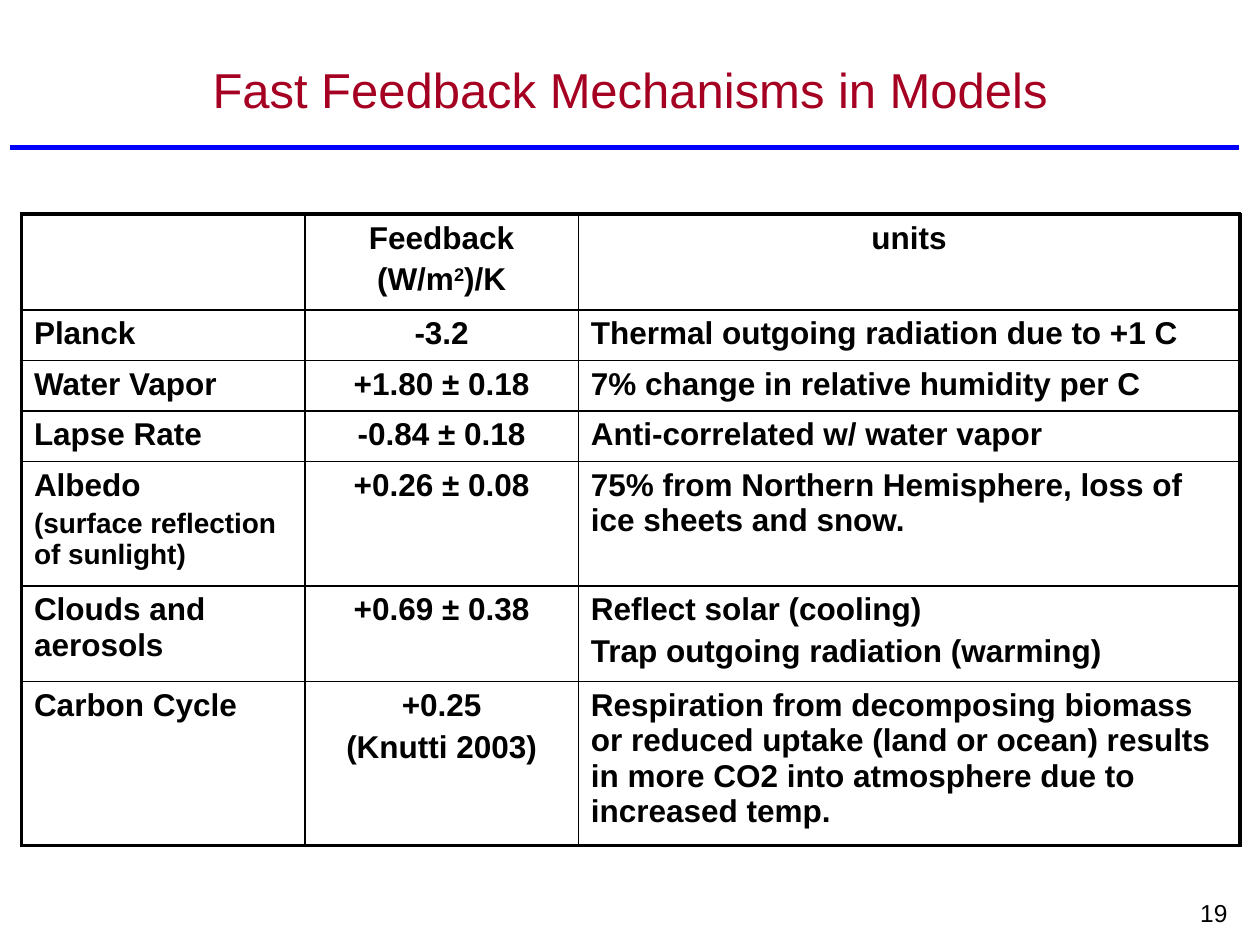
from dataclasses import dataclass

from lxml import etree
from pptx import Presentation
from pptx.dml.color import RGBColor
from pptx.enum import shapes, text
from pptx.oxml import ns
from pptx.util import Inches, Pt


@dataclass(frozen=True)
class Theme:
    font: str = "Arial"
    ink: str = "000000"
    title_ink: str = "A50021"
    rule_ink: str = "0000FF"
    title_size: int = 28
    body_size: int = 18
    note_size: int = 16
    number_size: int = 14
    rule_width: float = 3
    frame_width: float = 2.25
    grid_width: float = 1


@dataclass(frozen=True)
class Line:
    """One paragraph; raised is the part of its words set as superscript."""
    words: str
    size: int = 18
    raised: str = ""


@dataclass(frozen=True)
class Feedback:
    mechanism: tuple
    strength: tuple
    remark: tuple
    height: float


THEME = Theme()
CENTER, LEFT, RIGHT = text.PP_ALIGN.CENTER, text.PP_ALIGN.LEFT, text.PP_ALIGN.RIGHT
COLUMN_WIDTHS = (2.25, 2.17, 5.25)

HEADER = Feedback((), (Line("Feedback"), Line("(W/m2)/K", raised="2")),
                  (Line("units"),), 0.76)
FEEDBACKS = (
    Feedback((Line("Planck"),), (Line("-3.2"),),
             (Line("Thermal outgoing radiation due to +1 C"),), 0.4),
    Feedback((Line("Water Vapor"),), (Line("+1.80 ± 0.18"),),
             (Line("7% change in relative humidity per C"),), 0.4),
    Feedback((Line("Lapse Rate"),), (Line("-0.84 ± 0.18"),),
             (Line("Anti-correlated w/ water vapor"),), 0.4),
    Feedback((Line("Albedo"),
              Line("(surface reflection of sunlight)", THEME.note_size)),
             (Line("+0.26 ± 0.08"),),
             (Line("75% from Northern Hemisphere, loss of ice sheets and snow."),), 0.99),
    Feedback((Line("Clouds and aerosols"),), (Line("+0.69 ± 0.38"),),
             (Line("Reflect solar (cooling)"),
              Line("Trap outgoing radiation (warming)")), 0.76),
    Feedback((Line("Carbon Cycle"),), (Line("+0.25"), Line("(Knutti 2003)")),
             (Line("Respiration from decomposing biomass or reduced uptake (land or "
                   "ocean) results in more CO2 into atmosphere due to increased temp."),),
             1.3),
)


def style_font(font, size: float, ink: str, bold: bool = False) -> None:
    for key, value in {"name": THEME.font, "size": Pt(size), "bold": bold}.items():
        setattr(font, key, value)
    font.color.rgb = RGBColor.from_string(ink)


def add_label(slide, words: str, box: tuple, size: float, ink: str, align, anchor) -> None:
    frame = slide.shapes.add_textbox(*map(Inches, box)).text_frame
    frame.word_wrap = True
    frame.vertical_anchor = anchor
    paragraph = frame.paragraphs[0]
    paragraph.alignment = align
    run = paragraph.add_run()
    run.text = words
    style_font(run.font, size, ink)


def add_rule(slide, left: float, right: float, y: float) -> None:
    rule = slide.shapes.add_connector(
        shapes.MSO_CONNECTOR.STRAIGHT, *map(Inches, (left, y, right, y)))
    rule.line.color.rgb = RGBColor.from_string(THEME.rule_ink)
    rule.line.width = Pt(THEME.rule_width)
    etree.SubElement(rule._element.spPr, ns.qn("a:effectLst"))


def write_lines(cell, lines: tuple, align) -> None:
    frame = cell.text_frame
    style_font(frame.paragraphs[0].font, THEME.body_size, THEME.ink, True)
    for index, line in enumerate(lines):
        paragraph = frame.add_paragraph() if index else frame.paragraphs[0]
        paragraph.alignment = align
        if index:
            paragraph.space_before = Pt(0.2 * line.size)
        pieces = line.words.partition(line.raised) if line.raised else (line.words,)
        for piece in pieces:
            run = paragraph.add_run()
            run.text = piece
            style_font(run.font, line.size, THEME.ink, True)
            if piece == line.raised:
                run.font._element.set("baseline", "30000")


def draw_borders(cell, on_frame: dict) -> None:
    """Thick lines where a side lies on the table's frame, thin ones elsewhere."""
    properties = cell._tc.get_or_add_tcPr()
    for index, (side, outer) in enumerate(on_frame.items()):
        width = THEME.frame_width if outer else THEME.grid_width
        border = etree.Element(ns.qn(f"a:ln{side}"), w=str(Pt(width)))
        fill = etree.SubElement(border, ns.qn("a:solidFill"))
        etree.SubElement(fill, ns.qn("a:srgbClr"), val=THEME.ink)
        properties.insert(index, border)


def add_feedback_table(slide, left: float, top: float) -> None:
    rows = (HEADER, *FEEDBACKS)
    size = sum(COLUMN_WIDTHS), sum(row.height for row in rows)
    table = slide.shapes.add_table(
        len(rows), len(COLUMN_WIDTHS), *map(Inches, (left, top, *size))).table
    table.first_row = table.horz_banding = False
    for column, width in zip(table.columns, COLUMN_WIDTHS):
        column.width = Inches(width)
    last_row, last_column = len(rows) - 1, len(COLUMN_WIDTHS) - 1
    for r, row in enumerate(rows):
        table.rows[r].height = Inches(row.height)
        for c, lines in enumerate((row.mechanism, row.strength, row.remark)):
            cell = table.cell(r, c)
            cell.fill.background()
            write_lines(cell, lines, CENTER if r == 0 or c == 1 else LEFT)
            draw_borders(cell, {"L": c == 0, "R": c == last_column,
                                "T": r == 0, "B": r == last_row})


def main() -> None:
    deck = Presentation()
    deck.slide_width, deck.slide_height = Inches(10), Inches(7.5)
    slide = deck.slides.add_slide(deck.slide_layouts[6])
    add_rule(slide, 0.08, 9.83, 1.17)
    add_label(slide, "19", (9.17, 7.08, 0.67, 0.27), THEME.number_size, THEME.ink,
              RIGHT, text.MSO_ANCHOR.TOP)
    add_label(slide, "Fast Feedback Mechanisms in Models", (0.5, 0.08, 9, 1.25),
              THEME.title_size, THEME.title_ink, CENTER, text.MSO_ANCHOR.MIDDLE)
    add_feedback_table(slide, 0.17, 1.7)
    deck.save("out.pptx")


if __name__ == "__main__":
    main()
